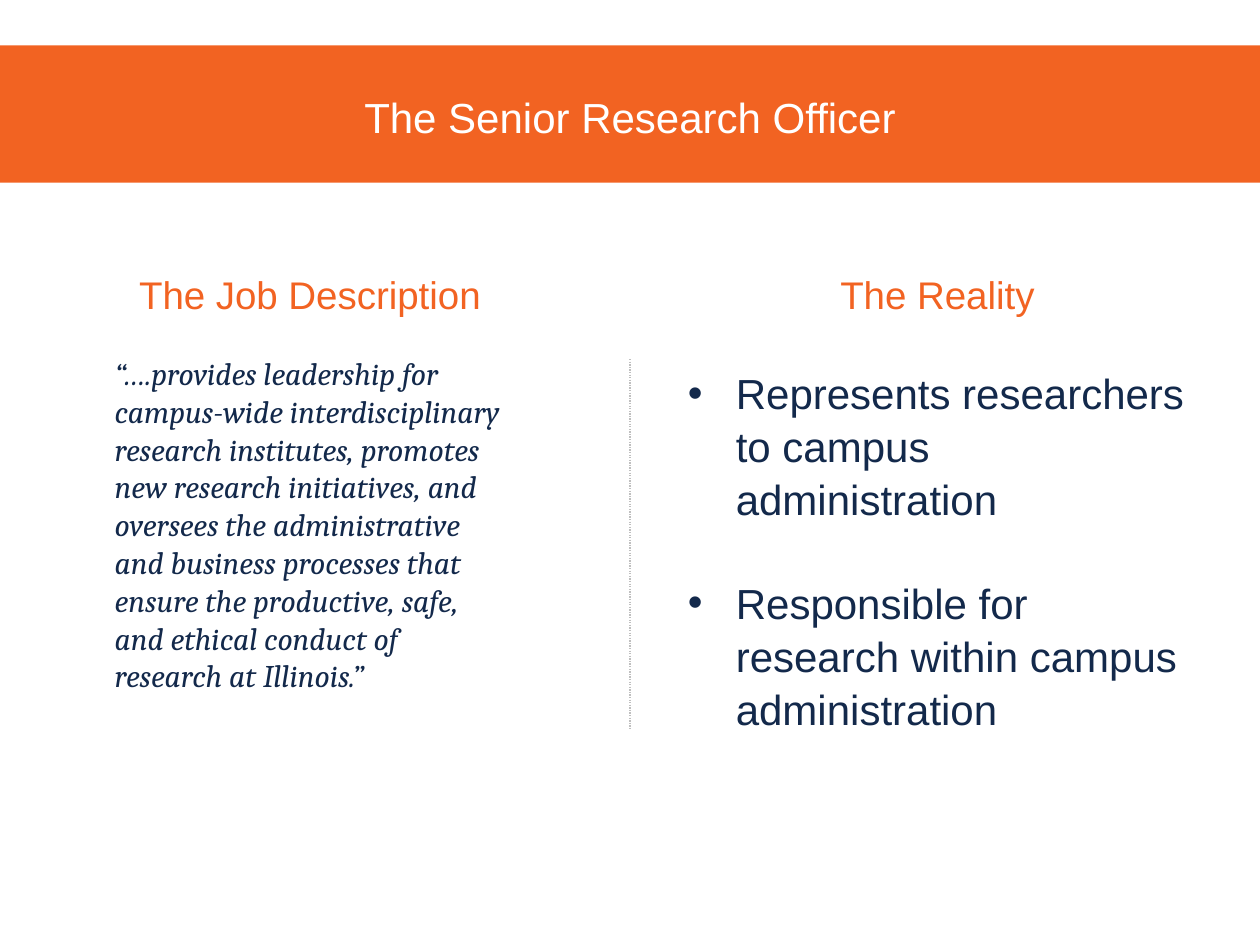
from lxml import etree
from pptx import Presentation, util as u
from pptx.dml.color import RGBColor
from pptx.enum import dml, shapes, text
from pptx.oxml.ns import qn

SCALE = 9144
HUES = {"orange": "F26322", "navy": "13294B", "white": "FFFFFF", "gray": "BFBFBF"}
HEAD = {"size": u.Pt(22), "name": "Arial", "bold": False}
QUOTE = {"size": u.Pt(18), "name": "Cambria", "italic": True}
LIST = {"size": u.Pt(24), "name": "Arial"}
TITLE = {"size": u.Pt(24), "name": "Arial"}
CENTER = {"alignment": text.PP_ALIGN.CENTER}
LEFT = {"alignment": text.PP_ALIGN.LEFT}


def px(n):
    """Turn px into EMU."""
    return u.Emu(n * SCALE)


def tint(hue):
    """Give the named colour."""
    return RGBColor.from_string(HUES[hue])


def apply(item, look):
    """Set each format value on the item."""
    for key, val in look.items():
        setattr(item, key, val)


def place(item, box):
    """Move the item to a box of left, top, width and height."""
    apply(item, dict(zip(("left", "top", "width", "height"), map(px, box))))


def mark(para, dot):
    """Give the paragraph a hanging bullet, or none."""
    props = para._p.get_or_add_pPr()
    props.set("marL", str(px(38) if dot else 0))
    props.set("indent", str(px(-38) if dot else 0))
    if dot:
        etree.SubElement(props, qn("a:buFont"), typeface="Arial")
        etree.SubElement(props, qn("a:buChar"), char="•")
    else:
        etree.SubElement(props, qn("a:buNone"))


def write(item, box, lines, font, hue, style, gap=0, dot=False):
    """Fill a placeholder with formatted lines."""
    place(item, box)
    frame = item.text_frame
    apply(frame, {"word_wrap": True, "auto_size": text.MSO_AUTO_SIZE.NONE,
                  "vertical_anchor": text.MSO_ANCHOR.TOP})
    frame.text = "\n".join(lines)
    for i, para in enumerate(frame.paragraphs):
        apply(para, {"space_before": u.Pt(gap if i else 0), **style})
        mark(para, dot)
        apply(para.font, font)
        para.font.color.rgb = tint(hue)


def banner(slide, box, words):
    """Draw the title band with its title."""
    x, y, w, h = box
    band = slide.shapes.add_shape(shapes.MSO_SHAPE.RECTANGLE, *map(px, box))
    band.shadow.inherit = False
    band.fill.solid()
    band.fill.fore_color.rgb = tint("orange")
    band.line.fill.background()
    slide.shapes._spTree.insert(2, band._element)
    write(slide.shapes.title, (x, y + 32, w, 63), [words], TITLE, "white", CENTER)


def column(slide, box, ids, head, inset, body):
    """Place a heading and the body below it."""
    x, y, w, h = box
    top, body_box, lines, font, style, gap, dot = body
    hold = slide.placeholders
    write(hold[ids[0]], (x + inset, y, 324, 47), [head], HEAD, "orange", CENTER)
    write(hold[ids[1]], (x, y + top, w, h - top), lines, font, "navy", style, gap, dot)


def divide(slide, x, top, end):
    """Draw the dotted rule between the columns."""
    rule = slide.shapes.add_connector(shapes.MSO_CONNECTOR.STRAIGHT,
                                      px(x), px(top), px(x), px(end))
    apply(rule.line, {"width": u.Pt(0.75), "dash_style": dml.MSO_LINE.ROUND_DOT})
    rule.line.color.rgb = tint("gray")
    etree.SubElement(rule._element.spPr, qn("a:effectLst"))


def main():
    """Build and save the slide."""
    deck = Presentation()
    apply(deck, {"slide_width": px(1000), "slide_height": px(750)})
    slide = deck.slides.add_slide(deck.slide_layouts[4])
    banner(slide, (0, 36, 1000, 109), "The Senior Research Officer")
    quote = ("“….provides leadership for campus-wide interdisciplinary research "
             "institutes, promotes new research initiatives, and oversees the "
             "administrative and business processes that ensure the productive, "
             "safe, and ethical conduct of research at Illinois.”")
    duties = ["Represents researchers to campus administration",
              "Responsible for research within campus administration"]
    column(slide, (81, 210, 330, 379), (1, 2), "The Job Description", 3,
           (66, None, [quote], QUOTE, LEFT, 0, False))
    column(slide, (536, 210, 416, 368), (3, 4), "The Reality", 46,
           (75, None, duties, LIST, {**LEFT, "line_spacing": 1.05}, 29, True))
    divide(slide, 500, 285, 579)
    deck.save("out.pptx")


if __name__ == "__main__":
    main()
